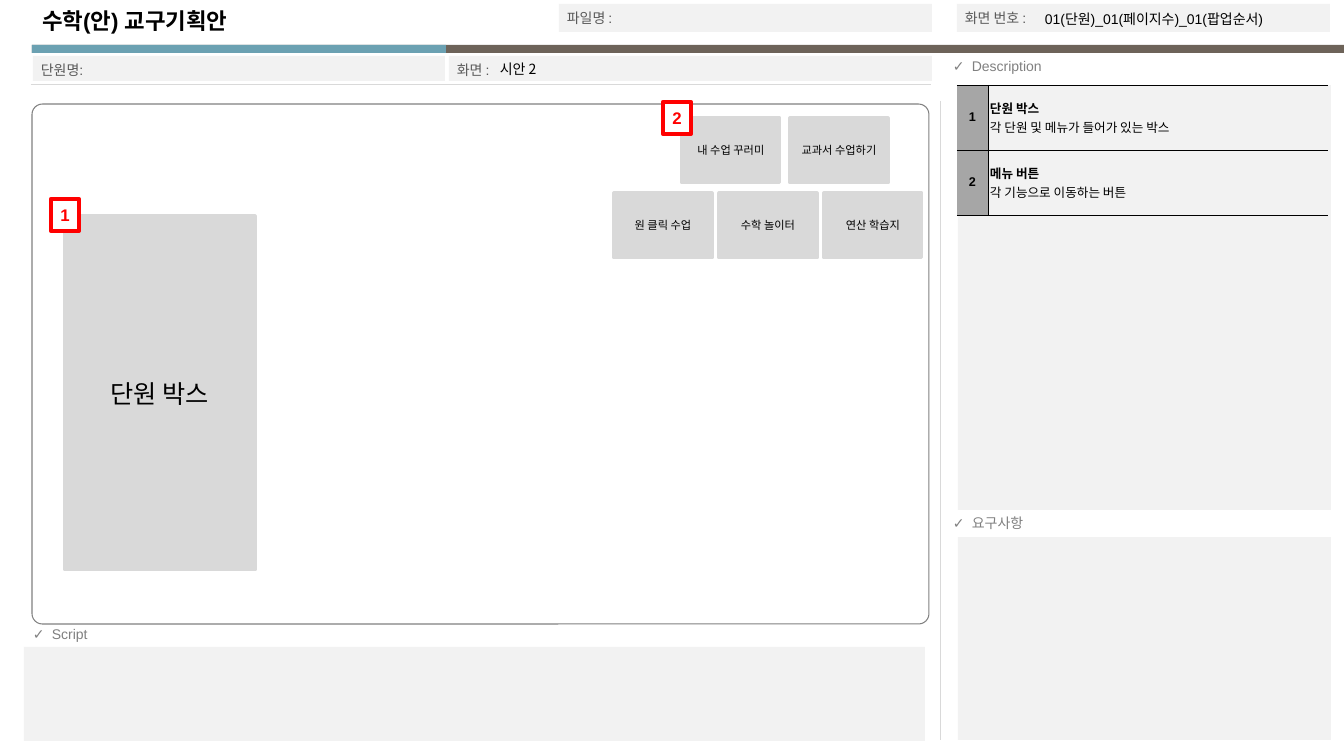
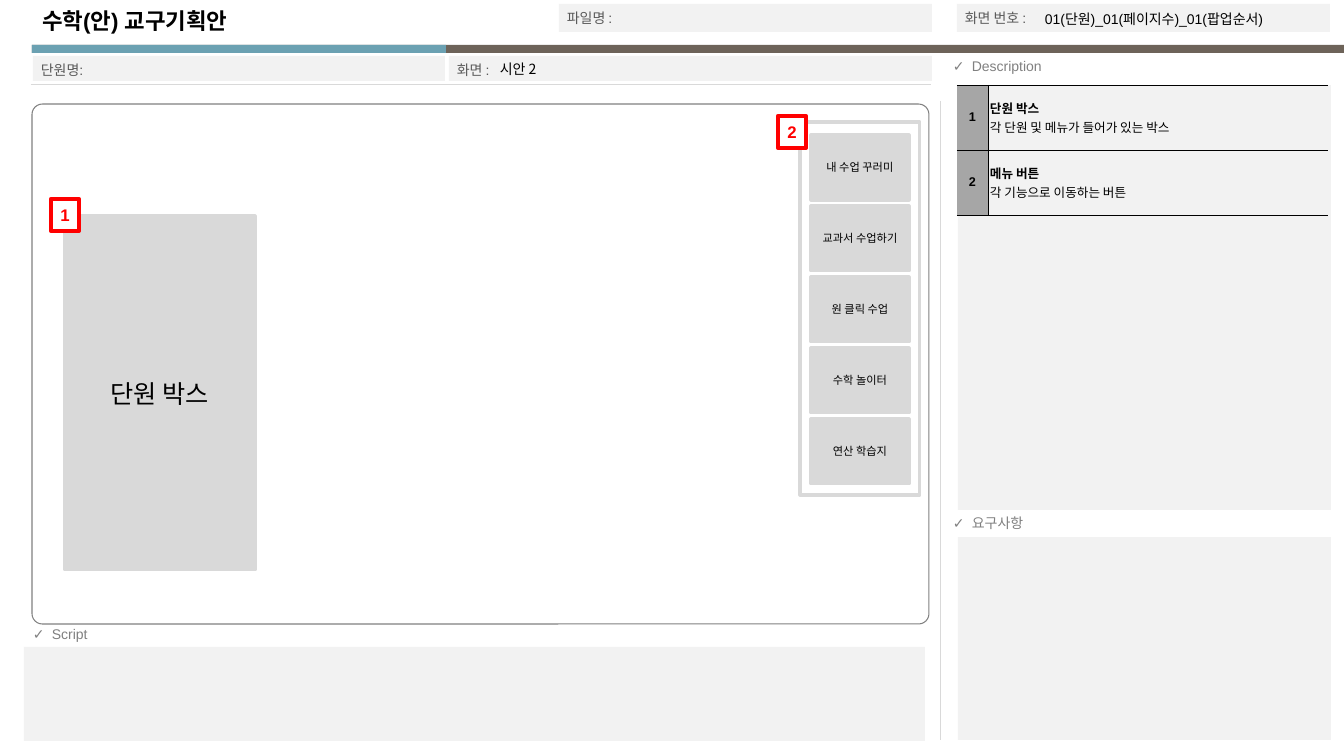
import pptx
import pptx.util
import pptx.dml.color
import pptx.enum.shapes
import pptx.enum.text
import pptx.oxml
import pptx.oxml.ns
import lxml.etree
from dataclasses import dataclass

SCALE = 914400 / 100.8  # EMU per px
KIND = pptx.enum.shapes.MSO_SHAPE
ALIGN = pptx.enum.text.PP_ALIGN
ANCHOR = pptx.enum.text.MSO_ANCHOR
FIT = pptx.enum.text.MSO_AUTO_SIZE


@dataclass(frozen=True)
class Theme:
    # Colours
    ink: str = "000000"
    white: str = "FFFFFF"
    teal: str = "6BA1B2"
    brown: str = "6D6359"
    panel: str = "F2F2F2"
    block: str = "D9D9D9"
    index: str = "A6A6A6"
    grey: str = "808080"
    label: str = "595959"
    red: str = "FF0000"
    # Fonts and sizes in points
    latin: str = "Arial"
    korean: str = "Noto Sans CJK KR"
    title: int = 16
    unit: int = 18
    badge: int = 12
    body: int = 10
    cell: int = 9
    menu: int = 8
    # Line widths in points
    hair: float = 0.25
    thin: float = 0.75
    edge: float = 2.25
    thick: float = 3


def px(num):
    return pptx.util.Emu(round(num * SCALE))


def rgb(code):
    return pptx.dml.color.RGBColor.from_string(code)


def node(parent, tag, **attrs):
    return lxml.etree.SubElement(parent, pptx.oxml.ns.qn(tag), attrs)


class Deck:
    def __init__(self, theme):
        self.theme = theme
        self.show = pptx.Presentation()
        self.show.slide_width, self.show.slide_height = px(1344), px(756)
        self.base = self.show.slide_layouts[5]
        self.slide = None

    def page(self):
        self.slide = self.show.slides.add_slide(self.base)

    def share(self):
        """Move the parts drawn so far to the layout."""
        tree = self.base.shapes.element
        for shape in list(self.slide.shapes):
            if not shape.is_placeholder:
                tree.insert_element_before(shape.element, "p:extLst")

    # Text
    def run(self, para, text, size, color, font=None, bold=False):
        run = para.add_run()
        run.text = text
        run.font.size = pptx.util.Pt(size)
        run.font.bold = bold
        run.font.color.rgb = rgb(color)
        run.font.name = font or self.theme.latin
        latin = run.font.element.find(pptx.oxml.ns.qn("a:latin")) if hasattr(
            run.font, "element") else run._r.rPr.find(pptx.oxml.ns.qn("a:latin"))
        east = pptx.oxml.parse_xml(
            '<a:ea %s typeface="%s"/>' % (pptx.oxml.ns.nsdecls("a"), self.theme.korean))
        latin.addnext(east)

    def title(self, text, x, y, w, h):
        head = self.slide.shapes.title
        head.left, head.top, head.width, head.height = map(px, (x, y, w, h))
        frame = head.text_frame
        frame.auto_size = FIT.NONE
        frame.vertical_anchor = ANCHOR.TOP
        para = frame.paragraphs[0]
        para.alignment = ALIGN.LEFT
        self.run(para, text, self.theme.title, self.theme.ink, bold=True)

    def text(self, text, x, y, w, h, color, font=None, anchor=ANCHOR.MIDDLE):
        box = self.slide.shapes.add_textbox(*map(px, (x, y, w, h)))
        frame = box.text_frame
        frame.word_wrap = True
        frame.vertical_anchor = anchor
        para = frame.paragraphs[0]
        self.run(para, text, self.theme.body, color, font)
        return para

    def check(self, text, x, y, w, h):
        para = self.text(text, x, y, w, h, self.theme.grey, anchor=ANCHOR.TOP)
        props = para._p.get_or_add_pPr()
        props.set("marL", str(px(19)))
        props.set("indent", str(-px(19)))
        node(props, "a:buFont", typeface=self.theme.latin)
        node(props, "a:buChar", char="✓")

    # Shapes
    def box(self, x, y, w, h, fill=None, line=None, width=0, kind=KIND.RECTANGLE):
        shape = self.slide.shapes.add_shape(kind, *map(px, (x, y, w, h)))
        shape.shadow.inherit = False
        if fill:
            shape.fill.solid()
            shape.fill.fore_color.rgb = rgb(fill)
        else:
            shape.fill.background()
        if line:
            shape.line.color.rgb = rgb(line)
            shape.line.width = pptx.util.Pt(width)
        else:
            shape.line.fill.background()
        return shape

    def center(self, shape, text, size, color, font=None, bold=False):
        frame = shape.text_frame
        frame.word_wrap = False
        frame.vertical_anchor = ANCHOR.MIDDLE
        para = frame.paragraphs[0]
        para.alignment = ALIGN.CENTER
        self.run(para, text, size, color, font, bold)

    def block(self, text, x, y, w, h, size):
        t = self.theme
        shape = self.box(x, y, w, h, t.block, t.block, t.edge)
        self.center(shape, text, size, t.ink, t.korean)

    def badge(self, text, x, y):
        t = self.theme
        shape = self.box(x, y, 28, 32, t.white, t.red, t.thick)
        self.center(shape, text, t.badge, t.red, bold=True)

    def rule(self, x1, y1, x2, y2):
        line = self.slide.shapes.add_connector(
            pptx.enum.shapes.MSO_CONNECTOR.STRAIGHT, *map(px, (x1, y1, x2, y2)))
        line.line.color.rgb = rgb(self.theme.block)
        line.line.width = pptx.util.Pt(self.theme.thin)
        node(line.element.spPr, "a:effectLst")

    # Table
    def edges(self, cell, sides):
        props = cell._tc.get_or_add_tcPr()
        for side in "LRTB":
            width = pptx.util.Pt(self.theme.hair)
            line = node(props, "a:ln" + side, w=str(width))
            if side in sides:
                node(node(line, "a:solidFill"), "a:srgbClr", val=self.theme.ink)
            else:
                node(line, "a:noFill")

    def table(self, rows, x, y, cols, high):
        t = self.theme
        grid = self.slide.shapes.add_table(
            len(rows), len(cols), *map(px, (x, y, sum(cols), high * len(rows)))).table
        grid.first_row = grid.horz_banding = False
        for col, width in zip(grid.columns, cols):
            col.width = px(width)
        for i, (name, note) in enumerate(rows):
            grid.rows[i].height = px(high)
            mark, info = grid.cell(i, 0), grid.cell(i, 1)
            for cell, sides in ((mark, "RTB"), (info, "LTB")):
                cell.margin_left = cell.margin_right = px(2)
                cell.margin_top = cell.margin_bottom = px(2)
                cell.vertical_anchor = ANCHOR.MIDDLE
                self.edges(cell, sides)
            mark.fill.solid()
            mark.fill.fore_color.rgb = rgb(t.index)
            info.fill.background()
            para = mark.text_frame.paragraphs[0]
            para.alignment = ALIGN.CENTER
            self.run(para, str(i + 1), t.cell, t.ink, bold=True)
            frame = info.text_frame
            self.run(frame.paragraphs[0], name, t.cell, t.ink, t.korean, True)
            self.run(frame.add_paragraph(), note, t.cell, t.ink, t.korean)


MENU = ["내 수업 꾸러미", "교과서 수업하기", "원 클릭 수업", "수학 놀이터", "연산 학습지"]
NOTES = [("단원 박스", "각 단원 및 메뉴가 들어가 있는 박스"),
         ("메뉴 버튼", "각 기능으로 이동하는 버튼")]


def frame(deck):
    """Bands, panels and labels of every slide."""
    t = deck.theme
    deck.box(32, 45, 1312, 8, t.brown)
    deck.box(32, 45, 414, 8, t.teal)
    deck.rule(941, 101, 941, 740)
    # Headed panels
    for name, head, panel in (
            ("Description", (943, 53, 400, 27), (958, 85, 373, 425)),
            ("요구사항", (943, 510, 400, 27), (958, 537, 373, 203)),
            ("Script", (23, 621, 397, 31), (24, 647, 901, 94))):
        deck.check(name, *head)
        deck.box(*panel, t.panel)
    # Labelled fields
    for name, x, y, w, h in (
            ("단원명:", 33, 56, 412, 25), ("화면 :", 449, 56, 483, 25),
            ("파일명 :", 559, 4, 373, 28), ("화면 번호 :", 957, 4, 373, 28)):
        deck.box(x, y, w, h, t.panel)
        deck.text(name, x - 2, y + 1, 369, 25, t.label)
    deck.rule(31, 85, 931, 85)
    # Screen outline
    screen = deck.box(32, 104, 897, 520, t.white, t.grey, t.thin, KIND.ROUNDED_RECTANGLE)
    screen.adjustments[0] = 0.02


def common(deck):
    """Title, field values, notes table and unit box."""
    t = deck.theme
    deck.title("수학(안) 교구기획안", 32, 2, 524, 37)
    deck.text("시안 2", 490, 56, 442, 25, t.ink, t.korean)
    deck.text("01(단원)_01(페이지수)_01(팝업순서)", 1035, 6, 292, 25, t.ink)
    deck.table(NOTES, 957, 85, (31, 340), 65)
    deck.block("단원 박스", 65, 216, 190, 354, t.unit)
    deck.badge("1", 51, 199)


def menu(deck, spots):
    for name, (x, y) in zip(MENU, spots):
        deck.block(name, x, y, 98, 65, deck.theme.menu)


def main():
    deck = Deck(Theme())
    t = deck.theme

    # Slide 1: menu in two rows
    deck.page()
    frame(deck)
    deck.share()
    common(deck)
    top = [(682 + 108 * i, 118) for i in range(2)]
    low = [(614 + 105 * i, 193) for i in range(3)]
    menu(deck, top + low)
    deck.badge("2", 663, 102)

    # Slide 2: menu in one column
    deck.page()
    common(deck)
    menu(deck, [(811, 135 + 71 * i) for i in range(5)])
    deck.box(800, 122, 120, 373, None, t.block, t.edge)
    deck.badge("2", 778, 116)

    deck.show.save("out.pptx")


if __name__ == "__main__":
    main()
